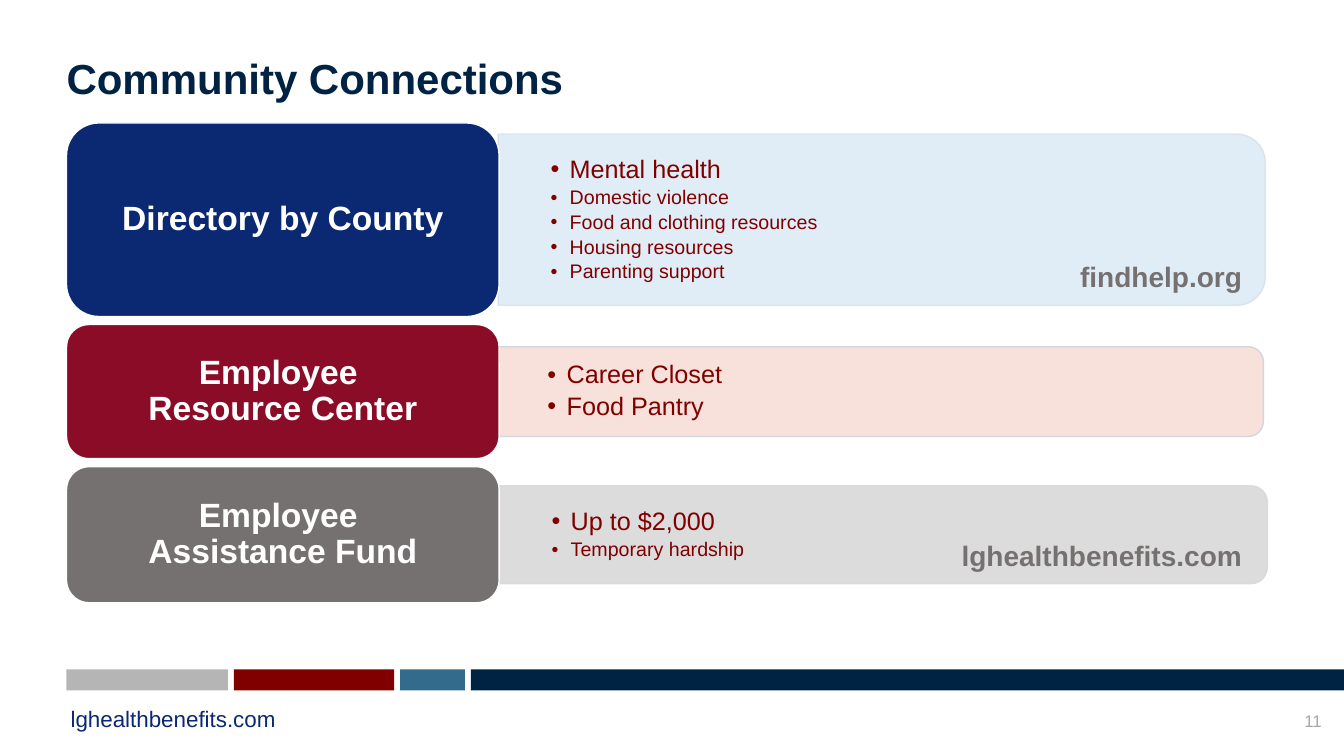
import pptx
import pptx.util
import pptx.dml.color
import pptx.enum.shapes
import pptx.enum.text
import pptx.oxml
import pptx.oxml.ns
from pptx.util import Inches

SHAPES = pptx.enum.shapes.MSO_SHAPE
ALIGN = pptx.enum.text.PP_ALIGN
ANCHOR = pptx.enum.text.MSO_ANCHOR

NAVY = "0A2972"
DARK_NAVY = "002243"
MAROON = "800000"
GRAY = "767171"
WHITE = "FFFFFF"

# Label, label top and height, label fill, then the panel:
# left, top, width, height, fill, fill opacity, line, line opacity, bullets
ROWS = [
    ("Directory by County", 1.22, 1.92, NAVY,
     (4.94, 1.33, 7.61, 1.7), "E0EDF7", 100, "CDD4DA", 50,
     [("Mental health", 18), ("Domestic violence", 14),
      ("Food and clothing resources", 14), ("Housing resources", 14),
      ("Parenting support", 14)]),
    ("Employee \vResource Center", 3.22, 1.33, "8B0C26",
     (4.91, 3.44, 7.62, 0.89), "F8E1DB", 100, "CED4DA", 90,
     [("Career Closet", 18), ("Food Pantry", 18)]),
    ("Employee \vAssistance Fund", 4.63, 1.35, GRAY,
     (4.95, 4.82, 7.62, 0.97), "D9D9D9", 90, "D9D9D9", 90,
     [("Up to $2,000", 18), ("Temporary hardship", 14)]),
]

FOOTER_BARS = [
    (0.66, 1.6, "B4B5B4"),
    (2.32, 1.59, MAROON),
    (3.97, 0.64, "326B8B"),
    (4.67, 8.66, DARK_NAVY),
]


def set_color(color_format, color, opacity=100):
    color_format.rgb = pptx.dml.color.RGBColor.from_string(color)
    if opacity < 100:
        element = color_format._xFill.find(pptx.oxml.ns.qn("a:srgbClr"))
        namespace = pptx.oxml.ns.nsdecls("a")
        element.append(pptx.oxml.parse_xml(
            f'<a:alpha {namespace} val="{opacity * 1000}"/>'))


def set_fill(fill, color, opacity=100):
    fill.solid()
    set_color(fill.fore_color, color, opacity)


def add_box(slide, kind, box, fill, opacity=100, line=None, line_opacity=100):
    shape = slide.shapes.add_shape(kind, *map(Inches, box))
    shape.shadow.inherit = False
    set_fill(shape.fill, fill, opacity)
    if line:
        shape.line.width = pptx.util.Pt(1)
        set_fill(shape.line.fill, line, line_opacity)
    else:
        shape.line.fill.background()
    return shape


def format_frame(frame, margins=(0, 0), anchor=ANCHOR.MIDDLE):
    """Margins are horizontal and vertical, in inches."""
    horizontal, vertical = map(Inches, margins)
    values = {"word_wrap": True, "vertical_anchor": anchor,
              "margin_left": horizontal, "margin_right": horizontal,
              "margin_top": vertical, "margin_bottom": vertical}
    for name, value in values.items():
        setattr(frame, name, value)


def write_paragraph(paragraph, text, size, color, bold=False, **layout):
    paragraph.text = text
    for name, value in layout.items():
        setattr(paragraph, name, value)
    for run in paragraph.runs:
        values = {"name": "Arial", "size": pptx.util.Pt(size), "bold": bold}
        for name, value in values.items():
            setattr(run.font, name, value)
        set_color(run.font.color, color)


def add_text(slide, box, text, size, color, bold=False,
             alignment=ALIGN.LEFT, anchor=ANCHOR.BOTTOM):
    frame = slide.shapes.add_textbox(*map(Inches, box)).text_frame
    format_frame(frame, anchor=anchor)
    write_paragraph(frame.paragraphs[0], text, size, color, bold,
                    alignment=alignment)


def add_bullet(paragraph):
    properties = paragraph._p.get_or_add_pPr()
    properties.set("marL", str(Inches(0.44)))
    properties.set("indent", str(Inches(-0.19)))
    namespace = pptx.oxml.ns.nsdecls("a")
    for xml in (f'<a:buFont {namespace} typeface="Arial"/>',
                f'<a:buChar {namespace} char="•"/>'):
        properties.append(pptx.oxml.parse_xml(xml))


def add_panel(slide, box, fill, opacity, line, line_opacity):
    """Draw a panel rounded on its right side, by turning one rounded on top."""
    left, top, width, height = box
    shift = (width - height) / 2
    upright = (left + shift, top - shift, height, width)
    shape = add_box(slide, SHAPES.ROUND_2_SAME_RECTANGLE, upright,
                    fill, opacity, line, line_opacity)
    shape.rotation = 90


def add_bullets(slide, box, items):
    frame = slide.shapes.add_textbox(*map(Inches, box)).text_frame
    format_frame(frame, (0.27, 0.14))
    for index, (text, size) in enumerate(items):
        paragraph = frame.add_paragraph() if index else frame.paragraphs[0]
        add_bullet(paragraph)
        write_paragraph(paragraph, text, size, MAROON, line_spacing=0.9,
                        space_after=pptx.util.Pt(round(size * 0.18, 1)))


def add_label(slide, text, top, height, fill):
    shape = add_box(slide, SHAPES.ROUNDED_RECTANGLE,
                    (0.66, top, 4.29, height), fill, line=WHITE)
    format_frame(shape.text_frame, (0.1, 0.05))
    write_paragraph(shape.text_frame.paragraphs[0], text, 24, WHITE, True,
                    alignment=ALIGN.CENTER, line_spacing=0.9)


def add_footer(slide):
    for left, width, color in FOOTER_BARS:
        add_box(slide, SHAPES.RECTANGLE, (left, 6.64, width, 0.21), color)
    add_text(slide, (0.7, 6.99, 4.08, 0.27), "lghealthbenefits.com", 16, NAVY)
    add_text(slide, (12.77, 7.05, 0.34, 0.2), "11", 12, "A6A6A6",
             alignment=ALIGN.RIGHT)


def main():
    presentation = pptx.Presentation()
    presentation.slide_width = Inches(13.33)
    presentation.slide_height = Inches(7.5)
    slide = presentation.slides.add_slide(presentation.slide_layouts[6])

    add_footer(slide)
    add_text(slide, (0.66, 0.52, 12.11, 0.5), "Community Connections", 30,
             DARK_NAVY, True, anchor=ANCHOR.TOP)
    for (label, top, height, color, panel, fill, opacity,
         line, line_opacity, items) in ROWS:
        add_panel(slide, panel, fill, opacity, line, line_opacity)
        add_bullets(slide, panel, items)
        add_label(slide, label, top, height, color)
    for address, top in (("findhelp.org", 2.58), ("lghealthbenefits.com", 5.35)):
        add_text(slide, (9.44, top, 2.88, 0.33), address, 20, GRAY, True,
                 alignment=ALIGN.RIGHT)

    presentation.save("out.pptx")


if __name__ == "__main__":
    main()
